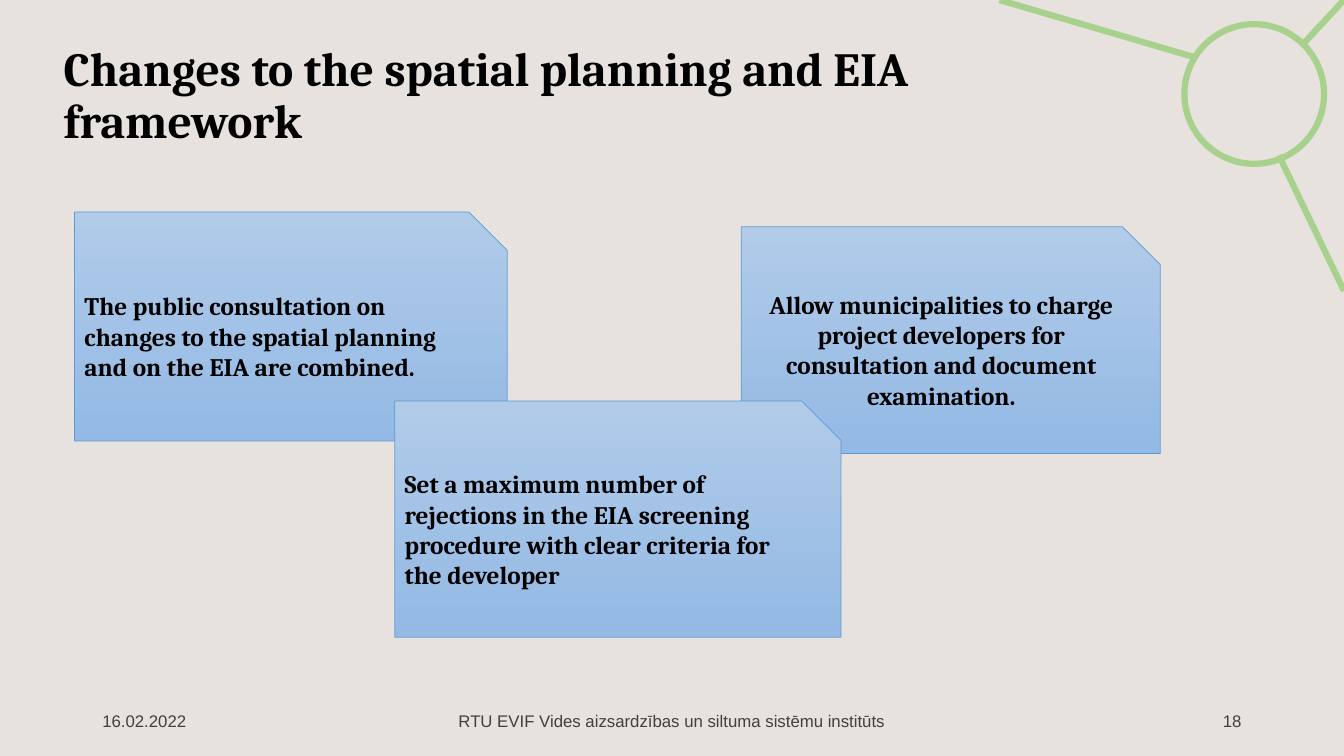
import pptx
import pptx.util
import pptx.dml.color
import pptx.enum.shapes
import pptx.enum.text
import pptx.oxml.ns
import lxml.etree

RGB = pptx.dml.color.RGBColor
SHAPE = pptx.enum.shapes.MSO_SHAPE
ALIGN = pptx.enum.text.PP_ALIGN
PX = 9525  # EMU per px, 96 px to the inch

BACKGROUND = RGB(0xE7, 0xE2, 0xDD)
GREEN = RGB(0xA9, 0xD1, 0x8E)
CARD_TOP = RGB(0xB1, 0xCB, 0xE9)
CARD_BOTTOM = RGB(0x93, 0xB9, 0xE4)
CARD_EDGE = RGB(0x5B, 0x9B, 0xD5)
BLACK = RGB(0x00, 0x00, 0x00)
GREY = RGB(0x40, 0x40, 0x40)


def px(*lengths):
    return [length * PX for length in lengths]


def write(shape, text, size, font, colour, bold, align):
    frame = shape.text_frame
    frame.word_wrap = True
    frame.auto_size = pptx.enum.text.MSO_AUTO_SIZE.NONE
    frame.vertical_anchor = pptx.enum.text.MSO_ANCHOR.MIDDLE
    para = frame.paragraphs[0]
    para.text = text
    para.alignment = align
    para.font.size = pptx.util.Pt(size)
    para.font.name = font
    para.font.bold = bold
    para.font.color.rgb = colour
    return para


deck = pptx.Presentation()
deck.slide_width, deck.slide_height = px(1280, 720)
page = deck.slides.add_slide(deck.slide_layouts[5])
page.background.fill.solid()
page.background.fill.fore_color.rgb = BACKGROUND

# Corner ornament: ring and three spokes
ring = page.shapes.add_shape(SHAPE.OVAL, *px(1128, 23, 133, 133))
ring.shadow.inherit = False
ring.fill.background()
ornament = [ring]
for ends in [(1280, 277, 1218, 148), (1136, 54, 952, 0), (1280, 0, 1241, 42)]:
    spoke = page.shapes.add_connector(
        pptx.enum.shapes.MSO_CONNECTOR.STRAIGHT, *px(*ends))
    ornament.append(spoke)
for part in ornament:
    part.line.color.rgb = GREEN
    part.line.width = pptx.util.Pt(4.5)
for spoke in ornament[1:]:
    lxml.etree.SubElement(spoke._element.spPr, pptx.oxml.ns.qn("a:effectLst"))

# Title
title = page.shapes.title
title.left, title.top, title.width, title.height = px(51, 42, 1033, 101)
heading = write(title, "Changes to the spatial planning and EIA framework",
                34, "Cambria", BLACK, True, ALIGN.LEFT)
heading.line_spacing = 0.9

# Cards, from back to front
cards = [
    ((706, 216, 399, 216), ALIGN.CENTER,
     "Allow municipalities to charge project developers for consultation "
     "and document examination."),
    ((71, 202, 412, 218), ALIGN.LEFT,
     "The public consultation on changes to the spatial planning and on "
     "the EIA are combined."),
    ((376, 382, 425, 225), ALIGN.LEFT,
     "Set a maximum number of rejections in the EIA screening procedure "
     "with clear criteria for the developer"),
]
for place, align, text in cards:
    card = page.shapes.add_shape(SHAPE.SNIP_1_RECTANGLE, *px(*place))
    card.shadow.inherit = False
    card.fill.gradient()
    card.fill.gradient_angle = 270
    for stop, colour in zip(card.fill.gradient_stops, (CARD_TOP, CARD_BOTTOM)):
        stop.color.rgb = colour
    card.line.color.rgb = CARD_EDGE
    card.line.width = pptx.util.Pt(0.5)
    write(card, text, 18, "Cambria", BLACK, True, align)

# Footer: date, institute, page number
footer = [
    (88, 288, ALIGN.LEFT, "16.02.2022"),
    (424, 432, ALIGN.CENTER,
     "RTU EVIF Vides aizsardzības un siltuma sistēmu institūts"),
    (904, 288, ALIGN.RIGHT, "18"),
]
for left, width, align, text in footer:
    box = page.shapes.add_textbox(*px(left, 667, width, 38))
    write(box, text, 12, "Arial", GREY, False, align)

deck.save("out.pptx")
